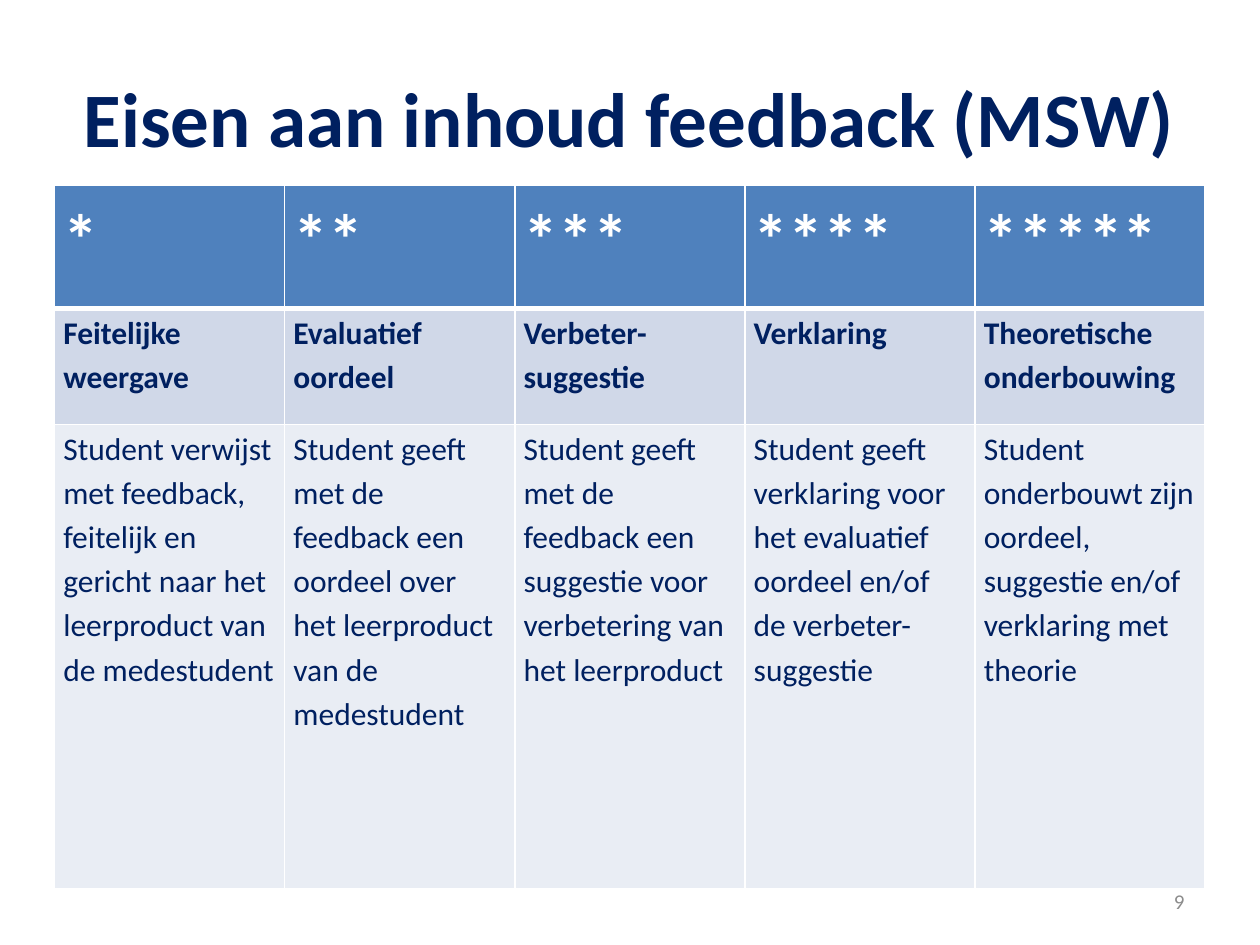
from dataclasses import dataclass

from pptx import Presentation
from pptx.dml.color import RGBColor
from pptx.enum.text import MSO_ANCHOR, PP_ALIGN
from pptx.oxml import parse_xml
from pptx.oxml.ns import nsdecls
from pptx.util import Pt


@dataclass(frozen=True)
class Theme:
    font: str = "Calibri"
    navy: str = "002060"
    white: str = "FFFFFF"
    gray: str = "8C8C8C"
    fills: tuple = ("4F81BD", "D0D8E8", "E9EDF4")
    title: int = 44
    stars: int = 40
    body: int = 18
    small: int = 12


THEME = Theme()

LEVELS = [
    ("Feitelijke weergave",
     "Student verwijst met feedback, feitelijk en gericht naar het "
     "leerproduct van de medestudent"),
    ("Evaluatief oordeel",
     "Student geeft met de feedback een oordeel over het leerproduct "
     "van de medestudent"),
    ("Verbeter-suggestie",
     "Student geeft met de feedback een suggestie voor verbetering "
     "van het leerproduct"),
    ("Verklaring",
     "Student geeft verklaring voor het evaluatief oordeel en/of "
     "de verbeter-suggestie"),
    ("Theoretische onderbouwing",
     "Student onderbouwt zijn oordeel, suggestie en/of verklaring "
     "met theorie"),
]


def style(para, size, color, bold=False):
    font = para.font
    font.name, font.size, font.bold = THEME.font, Pt(size), bold
    font.color.rgb = RGBColor.from_string(color)


def add_label(slide, box, text, align, size, color, bold=False):
    frame = slide.shapes.add_textbox(*map(Pt, box)).text_frame
    frame.word_wrap = True
    frame.vertical_anchor = MSO_ANCHOR.MIDDLE
    para = frame.paragraphs[0]
    para.text, para.alignment = text, align
    style(para, size, color, bold)


def set_edges(cell, top, bottom):
    props = cell._tc.get_or_add_tcPr()
    widths = {"L": 1, "R": 1, "T": top, "B": bottom}
    for i, (side, width) in enumerate(widths.items()):
        props.insert(i, parse_xml(
            f'<a:ln{side} {nsdecls("a")} w="{Pt(width)}"><a:solidFill>'
            f'<a:srgbClr val="{THEME.white}"/></a:solidFill></a:ln{side}>'))


def add_levels(slide, box, heights):
    table = slide.shapes.add_table(
        len(heights), len(LEVELS), *map(Pt, box)).table
    for row, height in zip(table.rows, heights):
        row.height = Pt(height)
    for col in table.columns:
        col.width = Pt(box[2] / len(LEVELS))

    # Each column holds its stars, name and description
    looks = [(THEME.stars, THEME.white, True),
             (THEME.body, THEME.navy, True),
             (THEME.body, THEME.navy, False)]
    edges = [(1, 3), (3, 1), (1, 1)]
    for c, (name, detail) in enumerate(LEVELS):
        for r, text in enumerate(("*" * (c + 1), name, detail)):
            cell = table.cell(r, c)
            cell.margin_left = cell.margin_right = Pt(5)
            cell.margin_top = cell.margin_bottom = 0
            cell.fill.solid()
            cell.fill.fore_color.rgb = RGBColor.from_string(THEME.fills[r])
            set_edges(cell, *edges[r])
            para = cell.text_frame.paragraphs[0]
            para.text, para.line_spacing = text, 1.15
            style(para, *looks[r])


def main():
    deck = Presentation()
    deck.slide_width, deck.slide_height = Pt(720), Pt(540)
    slide = deck.slides.add_slide(deck.slide_layouts[6])

    # Title
    add_label(slide, (36, 21.6, 648, 90), "Eisen aan inhoud feedback (MSW)",
              PP_ALIGN.CENTER, THEME.title, THEME.navy, True)
    # Slide number
    add_label(slide, (516, 500.5, 168, 28.75), "9",
              PP_ALIGN.RIGHT, THEME.small, THEME.gray)
    # Feedback levels
    add_levels(slide, (31.2, 105.8, 657.5, 402.3), (70.5, 66.2, 265.6))

    deck.save("out.pptx")


if __name__ == "__main__":
    main()
